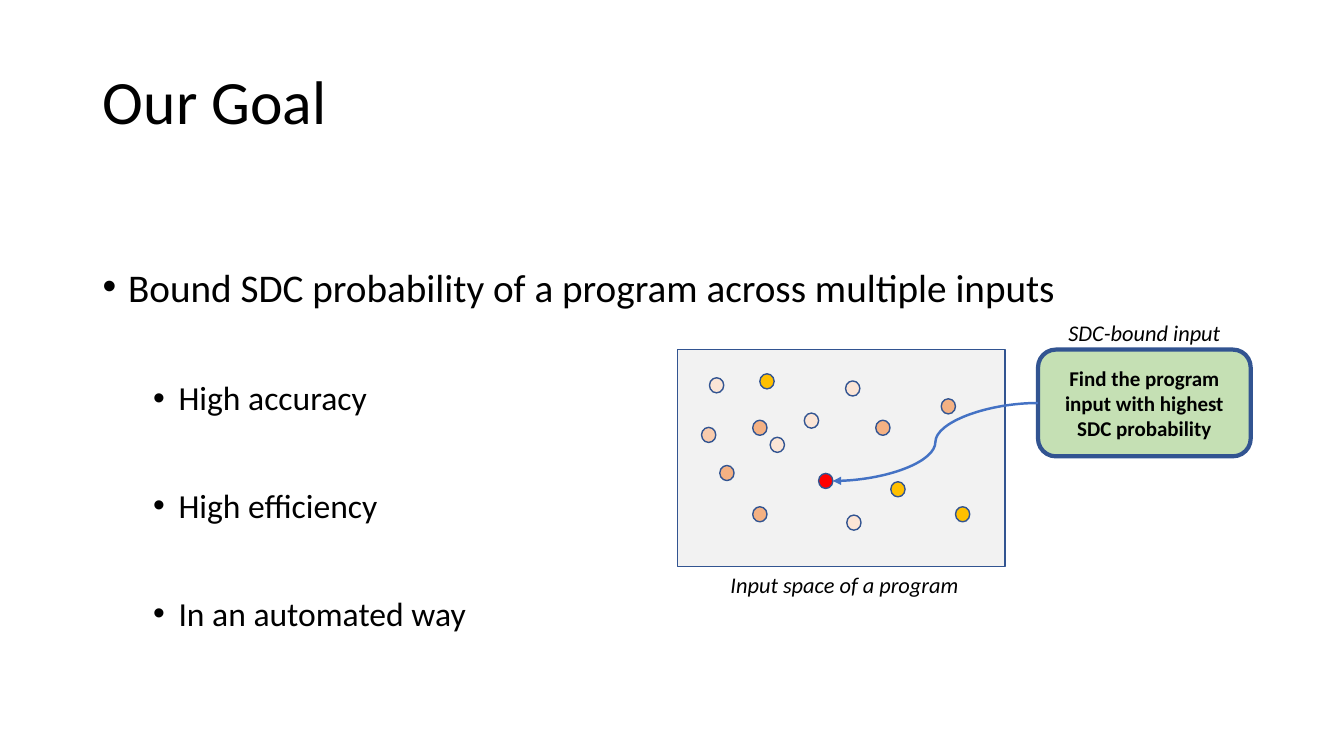
from dataclasses import dataclass

from lxml import etree
from pptx import Presentation
from pptx.dml.color import RGBColor
from pptx.enum.shapes import MSO_CONNECTOR, MSO_SHAPE
from pptx.enum.text import MSO_ANCHOR, MSO_AUTO_SIZE, PP_ALIGN
from pptx.oxml.ns import qn
from pptx.util import Cm, Pt

RECTANGLE, ROUNDED, OVAL = MSO_SHAPE.RECTANGLE, MSO_SHAPE.ROUNDED_RECTANGLE, MSO_SHAPE.OVAL
CURVE = MSO_CONNECTOR.CURVE
LEFT, CENTER = PP_ALIGN.LEFT, PP_ALIGN.CENTER
TOP, MIDDLE = MSO_ANCHOR.TOP, MSO_ANCHOR.MIDDLE
NO_FIT = MSO_AUTO_SIZE.NONE
LEFT_SIDE = 1


@dataclass(frozen=True)
class Theme:
    """Font, colours and type sizes of the slide."""
    font: str = "Calibri"
    text: str = "000000"
    outline: str = "325491"
    arrow: str = "4472C4"
    space: str = "F2F2F2"
    callout: str = "C5E0B4"
    bound: str = "FF0000"
    title_size: int = 44
    goal_size: int = 28
    aim_size: int = 24
    caption_size: int = 16
    callout_size: int = 15


@dataclass(frozen=True)
class Box:
    """A region in centimetres."""
    left: float
    top: float
    width: float
    height: float

    def lengths(self):
        """Return the region as slide lengths."""
        return Cm(self.left), Cm(self.top), Cm(self.width), Cm(self.height)


THEME = Theme()
DOT_WIDTH, DOT_HEIGHT = 0.36, 0.38
BOUND_INPUT = (3.56, 3.12)
INPUTS_BY_SHADE = {
    "FBE5D6": [(0.81, 0.71), (3.2, 1.6), (4.24, 0.79), (2.34, 2.21), (4.27, 4.17)],
    "F8CBAD": [(0.61, 1.96)],
    "F4B183": [(1.07, 2.92), (1.9, 1.78), (1.9, 3.96), (5, 1.78), (6.65, 1.24)],
    "FFC000": [(2.08, 0.61), (5.38, 3.33), (7.01, 3.96)],
    THEME.bound: [BOUND_INPUT],
}
GOAL = "Bound SDC probability of a program across multiple inputs"
AIMS = ["High accuracy", "High efficiency", "In an automated way"]


def add_run(paragraph, text, size, bold=False, italic=False):
    """Append one formatted run to a paragraph."""
    run = paragraph.add_run()
    run.text = text
    run.font.name = THEME.font
    run.font.size = Pt(size)
    run.font.bold = bold
    run.font.italic = italic
    run.font.color.rgb = RGBColor.from_string(THEME.text)


def add_outlined(slide, kind, box, fill, weight=1):
    """Add a filled preset shape with the common outline colour."""
    shape = slide.shapes.add_shape(kind, *box.lengths())
    shape.shadow.inherit = False
    shape.fill.solid()
    shape.fill.fore_color.rgb = RGBColor.from_string(fill)
    shape.line.color.rgb = RGBColor.from_string(THEME.outline)
    shape.line.width = Pt(weight)
    return shape


def add_caption(slide, box, text, align, wrap):
    """Add an italic caption in the box."""
    frame = slide.shapes.add_textbox(*box.lengths()).text_frame
    frame.word_wrap = wrap
    frame.paragraphs[0].alignment = align
    add_run(frame.paragraphs[0], text, THEME.caption_size, italic=True)


def add_title(slide, box):
    """Place and format the title placeholder."""
    title = slide.shapes.title
    title.left, title.top, title.width, title.height = box.lengths()
    frame = title.text_frame
    frame.auto_size = NO_FIT
    frame.vertical_anchor = MIDDLE
    paragraph = frame.paragraphs[0]
    paragraph.alignment = LEFT
    paragraph.line_spacing = 0.9
    add_run(paragraph, "Our Goal", THEME.title_size)


def add_bullet(paragraph, text, size, indent, space_before):
    """Format a paragraph as one widely spaced bullet."""
    paragraph.line_spacing = 2.5
    paragraph.space_before = Pt(space_before)
    properties = paragraph._p.get_or_add_pPr()
    properties.set("marL", str(Cm(indent)))
    properties.set("indent", str(Cm(-0.64)))
    etree.SubElement(properties, qn("a:buFont"), typeface="Arial")
    etree.SubElement(properties, qn("a:buChar"), char="•")
    add_run(paragraph, text, size)


def add_goals(slide, box):
    """Write the goal and its aims as a two-level list."""
    frame = slide.shapes.add_textbox(*box.lengths()).text_frame
    frame.word_wrap = True
    frame.vertical_anchor = TOP
    add_bullet(frame.paragraphs[0], GOAL, THEME.goal_size, 0.64, 10)
    for aim in AIMS:
        paragraph = frame.add_paragraph()
        paragraph.level = 1
        add_bullet(paragraph, aim, THEME.aim_size, 1.91, 5)


def add_input_space(slide, box):
    """Draw the input space with its dots and return the bound input's dot."""
    add_outlined(slide, RECTANGLE, box, THEME.space)
    for shade, places in INPUTS_BY_SHADE.items():
        for x, y in places:
            dot_box = Box(box.left + x, box.top + y, DOT_WIDTH, DOT_HEIGHT)
            dot = add_outlined(slide, OVAL, dot_box, shade)
            if (x, y) == BOUND_INPUT:
                bound_dot = dot
    caption_box = Box(box.left + 1.09, box.top + box.height, 6.35, 0.94)
    add_caption(slide, caption_box, "Input space of a program", LEFT, False)
    return bound_dot


def add_callout(slide, box, bound_dot):
    """Draw the captioned callout and its curved arrow to the bound input."""
    callout = add_outlined(slide, ROUNDED, box, THEME.callout, 3)
    frame = callout.text_frame
    frame.word_wrap = True
    frame.vertical_anchor = MIDDLE
    frame.paragraphs[0].alignment = CENTER
    add_run(frame.paragraphs[0], "Find the program input with highest SDC probability",
            THEME.callout_size, bold=True)
    arrow = slide.shapes.add_connector(
        CURVE, callout.left, callout.top + callout.height // 2,
        bound_dot.left + bound_dot.width, bound_dot.top + bound_dot.height // 2)
    arrow.begin_connect(callout, LEFT_SIDE)
    arrow.line.color.rgb = RGBColor.from_string(THEME.arrow)
    arrow.line.width = Pt(1.75)
    etree.SubElement(arrow.line._get_or_add_ln(), qn("a:tailEnd"), type="triangle")
    etree.SubElement(arrow._element.spPr, qn("a:effectLst"))
    caption_box = Box(box.left - 0.14, box.top - 0.89, box.width + 0.28, 0.94)
    add_caption(slide, caption_box, "SDC-bound input", CENTER, True)


def main():
    """Build and save the slide."""
    deck = Presentation()
    deck.slide_width, deck.slide_height = Cm(33.87), Cm(19.05)
    slide = deck.slides.add_slide(deck.slide_layouts.get_by_name("Title Only"))
    add_title(slide, Box(2.34, 1.02, 29.21, 3.23))
    add_goals(slide, Box(2.34, 4.72, 29.21, 12.09))
    bound_dot = add_input_space(slide, Box(17.07, 8.81, 8.26, 5.46))
    add_callout(slide, Box(26.16, 8.81, 5.36, 2.69), bound_dot)
    deck.save("out.pptx")


if __name__ == "__main__":
    main()
